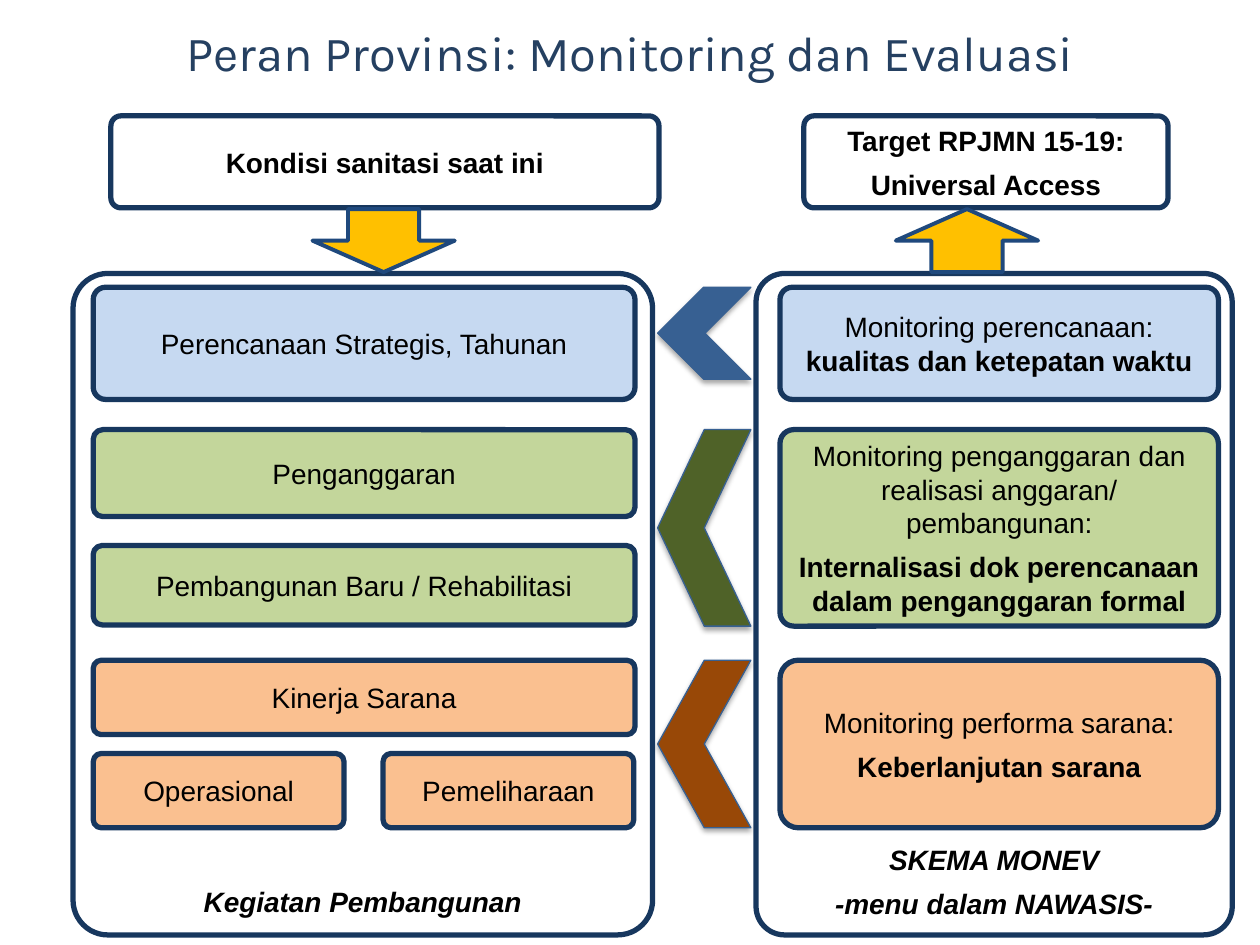
"""Build the slide on the provincial role in monitoring and evaluation."""
from lxml.etree import SubElement
from pptx import Presentation
from pptx.dml.color import RGBColor
from pptx.enum.shapes import MSO_SHAPE as Kind
from pptx.enum.text import MSO_ANCHOR as Anchor, PP_ALIGN as Align
from pptx.oxml.ns import qn
from pptx.util import Inches, Pt

THEME = {
    "title": "254061", "text": "000000", "edge": "17375E", "white": "FFFFFF",
    "blue": "C6D9F1", "green": "C3D69B", "orange": "FAC090",
    "navy": "376092", "olive": "4F6228", "brown": "984807",
    "gold": "FFC000", "rim": "1F497D",
    "head": ("Karla", 28), "body": ("Arial", 16),
}
TITLE = "Peran Provinsi: Monitoring dan Evaluasi"

COLS = {
    "title": (0.73, 8.54), "now": (0.88, 4.35), "goal": (6.38, 2.89),
    "left": (0.58, 4.6), "right": (6, 3.78),
    "work": (0.74, 4.3), "half1": (0.74, 1.99), "half2": (3.04, 1.99),
    "check": (6.19, 3.48), "link": (5.22, 0.74),
    "down": (2.48, 1.13), "up": (7.11, 1.13),
}
ROWS = {
    "title": (0.07, 0.68), "top": (0.92, 0.73), "gap": (1.66, 0.5),
    "frame": (2.17, 5.25), "plan": (2.28, 0.89), "chev": (2.28, 0.73),
    "fund": (3.41, 0.69), "build": (4.33, 0.63), "money": (3.41, 1.56),
    "run": (5.24, 0.59), "parts": (5.98, 0.59), "care": (5.24, 1.33),
}
CARDS = [
    ("work", "plan", "blue", 0.11, [["Perencanaan Strategis, Tahunan"]]),
    ("work", "fund", "green", 0.11, [["Penganggaran"]]),
    ("work", "build", "green", 0.11, [["Pembangunan Baru / Rehabilitasi"]]),
    ("work", "run", "orange", 0.11, [["Kinerja Sarana"]]),
    ("half1", "parts", "orange", 0.11, [["Operasional"]]),
    ("half2", "parts", "orange", 0.11, [["Pemeliharaan"]]),
    ("goal", "top", "white", 0.11,
     [["", "Target RPJMN 15-19:"], ["", "Universal Access"]]),
    ("now", "top", "white", 0.11, [["", "Kondisi sanitasi saat ini"]]),
    ("check", "plan", "blue", 0.11,
     [["Monitoring perencanaan: ", "kualitas dan ketepatan waktu"]]),
    ("check", "money", "green", 0.07,
     [["Monitoring penganggaran dan realisasi anggaran/ pembangunan:"],
      ["", "Internalisasi dok perencanaan dalam penganggaran formal"]]),
    ("check", "care", "orange", 0.11,
     [["Monitoring performa sarana:"], ["", "Keberlanjutan sarana"]]),
]
LINKS = [("chev", "navy"), ("money", "olive"), ("care", "brown")]
FRAMES = [
    ("right", [["", "SKEMA MONEV"], ["", "-menu dalam NAWASIS-"]]),
    ("left", [["", "Kegiatan Pembangunan"]]),
]
ARROWS = [("down", Kind.DOWN_ARROW), ("up", Kind.UP_ARROW)]


def tint(name):
    return RGBColor.from_string(THEME[name])


def place(col, row):
    (left, wide), (top, high) = COLS[col], ROWS[row]
    return [Inches(size) for size in (left, top, wide, high)]


def style(font, kind, color):
    font.name, size = THEME[kind]
    font.size = Pt(size)
    font.color.rgb = tint(color)


def draw(slide, kind, col, row, fill, edge, width):
    shape = slide.shapes.add_shape(kind, *place(col, row))
    shape.shadow.inherit = False
    if fill:
        shape.fill.solid()
        shape.fill.fore_color.rgb = tint(fill)
    else:
        shape.fill.background()
    shape.line.color.rgb = tint(edge)
    shape.line.width = Pt(width)
    return shape


def write(shape, lines, anchor=Anchor.MIDDLE, slant=None):
    frame = shape.text_frame
    frame.word_wrap = True
    frame.vertical_anchor = anchor
    frame.text = "\n".join(line[0] for line in lines)
    for para, line in zip(frame.paragraphs, lines):
        para.alignment = Align.CENTER
        para.space_after = Pt(6)
        for text in line[1:]:
            run = para.add_run()
            run.text = text
            run.font.bold = True
        for run in para.runs:
            style(run.font, "body", "text")
            run.font.italic = slant


def card(slide, col, row, fill, bend, lines, **look):
    shape = draw(slide, Kind.ROUNDED_RECTANGLE, col, row, fill, "edge", 3)
    shape.adjustments[0] = bend
    write(shape, lines, **look)


def shade(shape):
    effects = shape._element.spPr.find(qn("a:effectLst"))
    outer = SubElement(effects, qn("a:outerShdw"), blurRad=str(Pt(3.1)),
                       dist=str(Pt(1.8)), dir="5400000", rotWithShape="0")
    color = SubElement(outer, qn("a:srgbClr"), val=THEME["text"])
    SubElement(color, qn("a:alpha"), val="35000")


def head(slide):
    box = slide.shapes.add_textbox(*place("title", "title"))
    frame = box.text_frame
    frame.word_wrap = True
    frame.vertical_anchor = Anchor.MIDDLE
    frame.margin_left = frame.margin_right = 0
    frame.margin_top = frame.margin_bottom = 0
    frame.text = TITLE
    para = frame.paragraphs[0]
    para.alignment = Align.CENTER
    style(para.runs[0].font, "head", "title")


def main():
    deck = Presentation()
    deck.slide_width, deck.slide_height = Inches(10), Inches(7.5)
    slide = deck.slides.add_slide(deck.slide_layouts[6])
    head(slide)
    for item in CARDS:
        card(slide, *item)
    for row, color in LINKS:
        link = draw(slide, Kind.CHEVRON, "link", row, color, "navy", 0.75)
        link._element.spPr.xfrm.set("flipH", "1")
        shade(link)
    for col, lines in FRAMES:
        card(slide, col, "frame", None, 0.06, lines,
             anchor=Anchor.BOTTOM, slant=True)
    for col, kind in ARROWS:
        draw(slide, kind, col, "gap", "gold", "rim", 2.25)
    deck.save("out.pptx")


if __name__ == "__main__":
    main()
